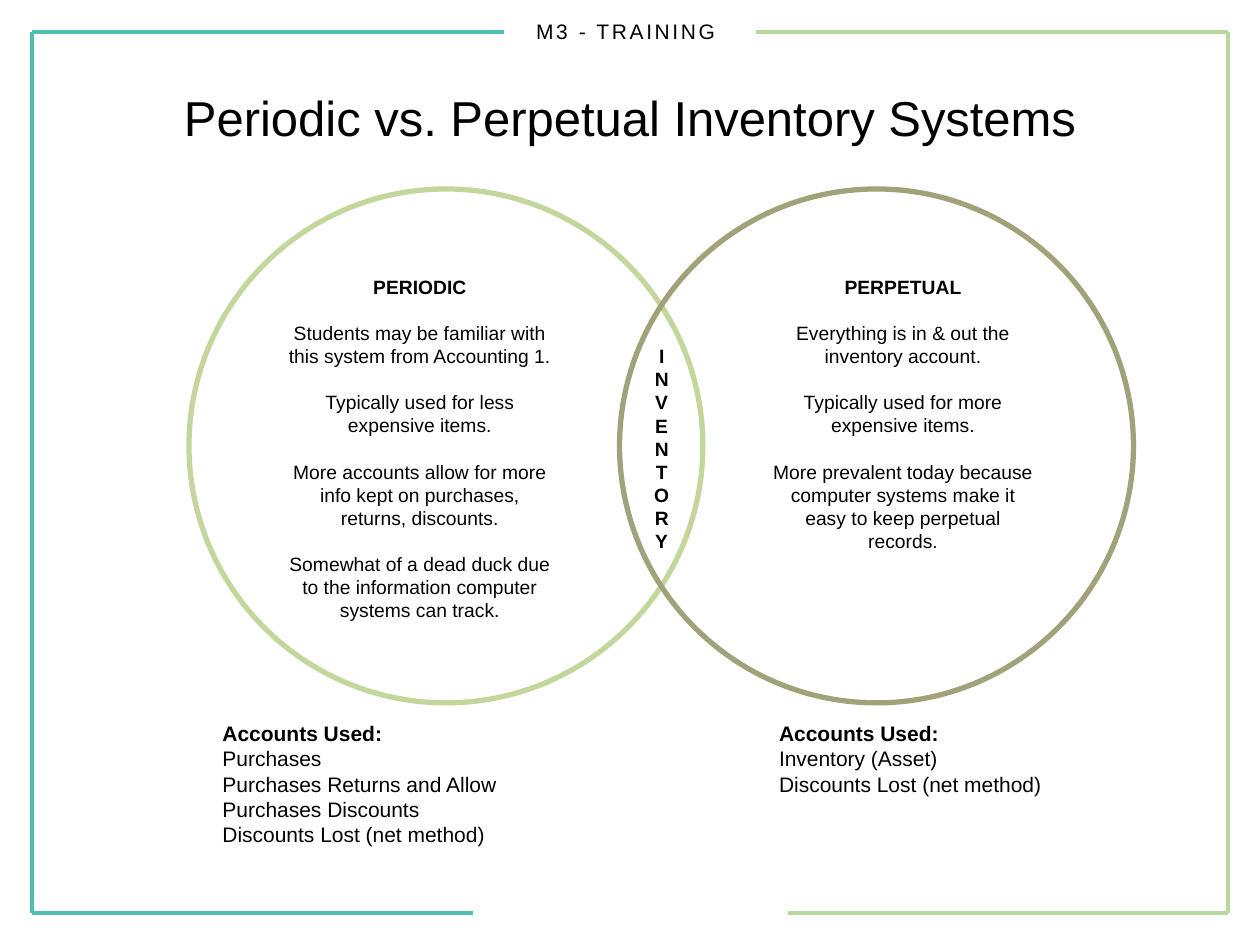
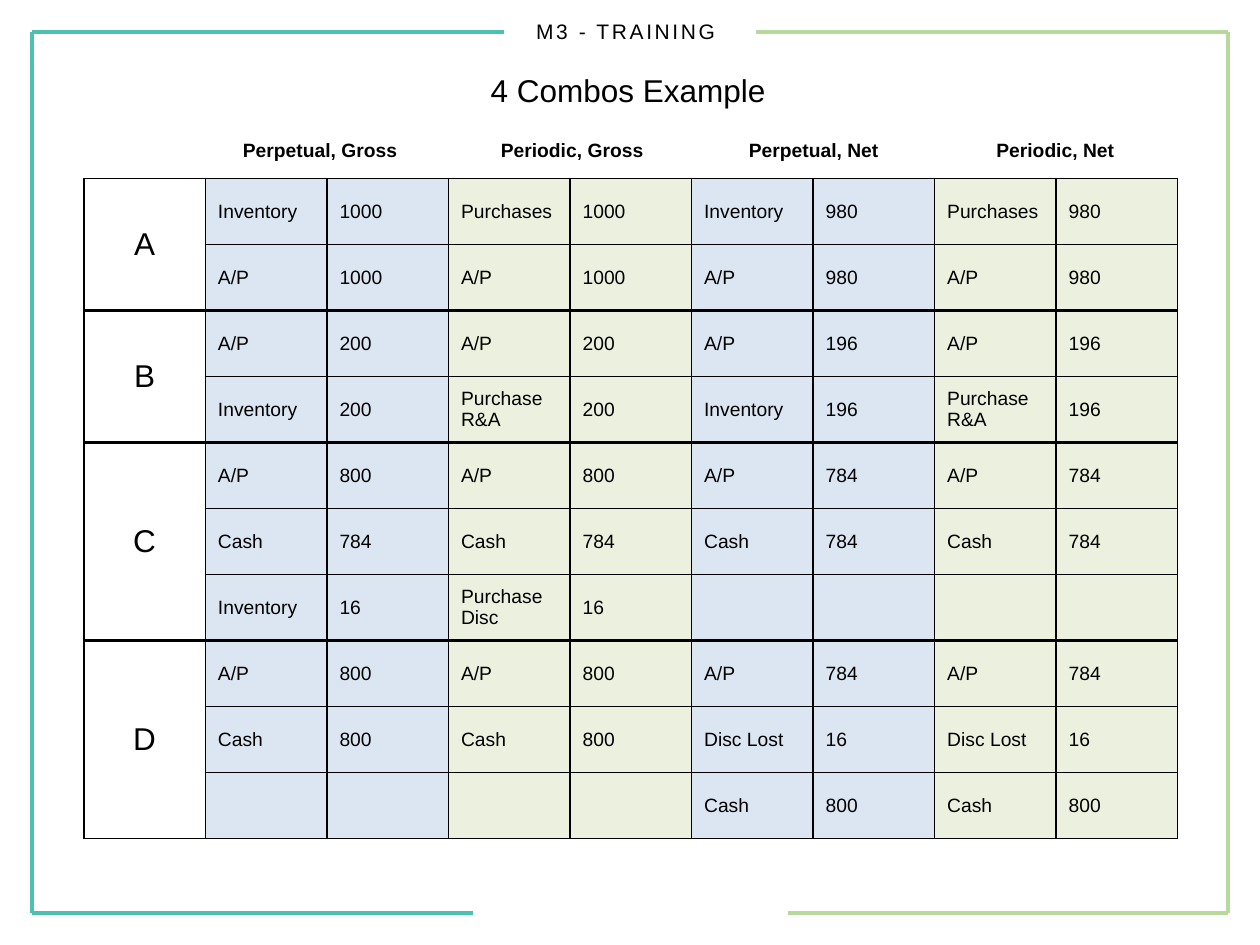
"""Build two training slides that compare periodic and perpetual inventory systems."""
from dataclasses import dataclass
from itertools import accumulate

from lxml.etree import SubElement
from pptx import Presentation
from pptx.dml.color import RGBColor
from pptx.enum.shapes import MSO_CONNECTOR, MSO_SHAPE
from pptx.enum.text import MSO_ANCHOR, MSO_AUTO_SIZE, PP_ALIGN
from pptx.oxml.ns import qn
from pptx.shapes.autoshape import Shape
from pptx.slide import Slide
from pptx.table import _Cell
from pptx.util import Cm, Pt

FONT = "Arial"
BLACK, WHITE = "000000", "FFFFFF"
TEAL, GREEN = "4CC1B0", "B7DA9C"
PERIODIC_RING, PERPETUAL_RING = "C3D69B", "A1A17A"
PERPETUAL_FILL, PERIODIC_FILL = "DCE6F2", "EBF1DE"

TITLE_ONLY, TWO_CONTENT = 5, 3
FRAME_LEFT, FRAME_TOP, FRAME_RIGHT, FRAME_BOTTOM = 0.64, 0.64, 24.76, 18.41
RING_TOP, RING_SIZE = 3.81, 10.36
COLUMN_WIDTH, ROW_HEIGHT = 2.45, 1.33
THIN, THICK = 1, 1.5


@dataclass(frozen=True)
class Box:
    left: float
    top: float
    width: float
    height: float


@dataclass(frozen=True)
class Style:
    size: float
    alignment: PP_ALIGN = PP_ALIGN.CENTER
    anchor: MSO_ANCHOR = MSO_ANCHOR.TOP
    bold_lines: int = 0
    gap: float = 0


@dataclass(frozen=True)
class FrameLine:
    start: tuple[float, float]
    end: tuple[float, float]
    color: str


@dataclass(frozen=True)
class System:
    ring_left: float
    ring_color: str
    features_box: Box
    features: list[str]
    accounts_box: Box
    accounts: list[str]


@dataclass(frozen=True)
class Group:
    letter: str
    rows: list[list[str]]


HEADER = Style(12, anchor=MSO_ANCHOR.MIDDLE)
MAIN_TITLE = Style(28, anchor=MSO_ANCHOR.MIDDLE)
SMALL_TITLE = Style(18, anchor=MSO_ANCHOR.MIDDLE)
FEATURES = Style(11, bold_lines=1, gap=13.2)
ACCOUNTS = Style(12, PP_ALIGN.LEFT, bold_lines=1)
OVERLAP = Style(11, bold_lines=9)
COLUMN_HEADING = Style(11, bold_lines=1)
LETTER_CELL = Style(18, anchor=MSO_ANCHOR.MIDDLE)
ENTRY_CELL = Style(11, PP_ALIGN.LEFT, MSO_ANCHOR.MIDDLE)

FRAME = [
    FrameLine((FRAME_LEFT, FRAME_TOP), (FRAME_LEFT, FRAME_BOTTOM), TEAL),
    FrameLine((FRAME_RIGHT, FRAME_TOP), (FRAME_RIGHT, FRAME_BOTTOM), GREEN),
    FrameLine((FRAME_LEFT, FRAME_BOTTOM), (9.53, FRAME_BOTTOM), TEAL),
    FrameLine((15.88, FRAME_BOTTOM), (FRAME_RIGHT, FRAME_BOTTOM), GREEN),
    FrameLine((FRAME_LEFT, FRAME_TOP), (10.16, FRAME_TOP), TEAL),
    FrameLine((15.24, FRAME_TOP), (FRAME_RIGHT, FRAME_TOP), GREEN),
]

SYSTEMS = [
    System(
        3.81, PERIODIC_RING, Box(5.5, 5.42, 5.93, 7.32),
        [
            "PERIODIC",
            "Students may be familiar with this system from Accounting 1.",
            "Typically used for less expensive items.",
            "More accounts allow for more info kept on purchases, returns, discounts.",
            "Somewhat of a dead duck due to the information computer systems can track.",
        ],
        Box(4.23, 14.4, 7.62, 2.82),
        [
            "Accounts Used:",
            "Purchases",
            "Purchases Returns and Allow",
            "Purchases Discounts",
            "Discounts Lost (net method)",
        ],
    ),
    System(
        12.49, PERPETUAL_RING, Box(15.24, 5.42, 5.93, 5.9),
        [
            "PERPETUAL",
            "Everything is in & out the inventory account.",
            "Typically used for more expensive items.",
            "More prevalent today because computer systems make it easy to keep perpetual records.",
        ],
        Box(15.45, 14.4, 7.62, 1.8),
        ["Accounts Used:", "Inventory (Asset)", "Discounts Lost (net method)"],
    ),
]

COLUMN_HEADINGS = {
    "Perpetual, Gross": 4.02,
    "Periodic, Gross": 9.1,
    "Perpetual, Net": 13.97,
    "Periodic, Net": 18.84,
}

GROUPS = [
    Group("A", [
        ["Inventory", "1000", "Purchases", "1000", "Inventory", "980", "Purchases", "980"],
        ["A/P", "1000", "A/P", "1000", "A/P", "980", "A/P", "980"],
    ]),
    Group("B", [
        ["A/P", "200", "A/P", "200", "A/P", "196", "A/P", "196"],
        ["Inventory", "200", "Purchase\vR&A", "200", "Inventory", "196", "Purchase\vR&A", "196"],
    ]),
    Group("C", [
        ["A/P", "800", "A/P", "800", "A/P", "784", "A/P", "784"],
        ["Cash", "784", "Cash", "784", "Cash", "784", "Cash", "784"],
        ["Inventory", "16", "Purchase\vDisc", "16", "", "", "", ""],
    ]),
    Group("D", [
        ["A/P", "800", "A/P", "800", "A/P", "784", "A/P", "784"],
        ["Cash", "800", "Cash", "800", "Disc Lost", "16", "Disc Lost", "16"],
        ["", "", "", "", "Cash", "800", "Cash", "800"],
    ]),
]


def color(value: str) -> RGBColor:
    """Turn a hex string into a colour."""
    return RGBColor.from_string(value)


def place(shape: Shape, box: Box) -> None:
    """Move and size a shape."""
    shape.left, shape.top = Cm(box.left), Cm(box.top)
    shape.width, shape.height = Cm(box.width), Cm(box.height)


def write(holder: Shape | _Cell, lines: list[str], style: Style) -> None:
    """Write unbulleted paragraphs in one style."""
    text_frame = holder.text_frame
    text_frame.text = "\n".join(lines)
    for index, paragraph in enumerate(text_frame.paragraphs):
        properties = paragraph._p.get_or_add_pPr()
        properties.set("marL", "0")
        properties.set("indent", "0")
        SubElement(properties, qn("a:buNone"))
        paragraph.alignment = style.alignment
        paragraph.space_before = Pt(style.gap if index else 0)
        for run in paragraph.runs:
            run.font.name = FONT
            run.font.size = Pt(style.size)
            run.font.bold = index < style.bold_lines
            run.font.color.rgb = color(BLACK)


def fill_box(shape: Shape, box: Box, lines: list[str], style: Style) -> None:
    """Place a text shape and write its lines."""
    place(shape, box)
    write(shape, lines, style)
    shape.text_frame.word_wrap = True
    shape.text_frame.auto_size = MSO_AUTO_SIZE.NONE
    shape.text_frame.vertical_anchor = style.anchor


def add_text(slide: Slide, box: Box, lines: list[str], style: Style) -> Shape:
    """Add a text box."""
    shape = slide.shapes.add_textbox(0, 0, 0, 0)
    fill_box(shape, box, lines, style)
    return shape


def add_frame(slide: Slide) -> None:
    """Draw the two-colour frame and the running header."""
    for line in FRAME:
        connector = slide.shapes.add_connector(
            MSO_CONNECTOR.STRAIGHT, *map(Cm, line.start + line.end))
        connector.line.color.rgb = color(line.color)
        connector.line.width = Pt(2.25)
        SubElement(connector._element.spPr, qn("a:effectLst"))
    header = add_text(slide, Box(0, 0, 25.4, 1.27), ["M3 - TRAINING "], HEADER)
    run = header.text_frame.paragraphs[0].runs[0]
    run._r.get_or_add_rPr().set("spc", "150")


def add_ring(slide: Slide, left: float, ring_color: str) -> None:
    """Draw one unfilled circle of the Venn diagram."""
    ring = slide.shapes.add_shape(
        MSO_SHAPE.OVAL, Cm(left), Cm(RING_TOP), Cm(RING_SIZE), Cm(RING_SIZE))
    ring.shadow.inherit = False
    ring.fill.background()
    ring.line.color.rgb = color(ring_color)
    ring.line.width = Pt(3)


def format_cell(cell: _Cell, fill: str, top: float, bottom: float) -> None:
    """Set the borders and the fill of a cell."""
    properties = cell._tc.get_or_add_tcPr()
    for side, width in {"L": THIN, "R": THIN, "T": top, "B": bottom}.items():
        border = SubElement(properties, qn(f"a:ln{side}"), w=str(Pt(width)))
        solid = SubElement(border, qn("a:solidFill"))
        SubElement(solid, qn("a:srgbClr"), val=BLACK)
    cell.fill.solid()
    cell.fill.fore_color.rgb = color(fill)
    cell.vertical_anchor = MSO_ANCHOR.MIDDLE


def add_entries_table(slide: Slide) -> None:
    """Add the journal entries, with one merged letter cell per group."""
    rows = [row for group in GROUPS for row in group.rows]
    columns = len(rows[0]) + 1
    table = slide.shapes.add_table(
        len(rows), columns, Cm(1.69), Cm(3.6),
        Cm(COLUMN_WIDTH * columns), Cm(ROW_HEIGHT * len(rows))).table
    table.first_row = table.horz_banding = False
    ends = list(accumulate(len(group.rows) for group in GROUPS))
    inner_ends = ends[:-1]
    for row_index, row in enumerate(rows):
        top = THICK if row_index in inner_ends else THIN
        bottom = THICK if row_index + 1 in inner_ends else THIN
        format_cell(table.cell(row_index, 0), WHITE, top, bottom)
        for column, entry in enumerate(row):
            cell = table.cell(row_index, column + 1)
            write(cell, [entry], ENTRY_CELL)
            fill = PERIODIC_FILL if column // 2 % 2 else PERPETUAL_FILL
            format_cell(cell, fill, top, bottom)
    for group, end in zip(GROUPS, ends):
        letter_cell = table.cell(end - len(group.rows), 0)
        letter_cell.merge(table.cell(end - 1, 0))
        write(letter_cell, [group.letter], LETTER_CELL)
        if end in inner_ends:
            letter_cell._tc.tcPr.find(qn("a:lnB")).set("w", str(Pt(THICK)))


def build_comparison(slide: Slide) -> None:
    """Build the Venn diagram slide."""
    add_frame(slide)
    fill_box(slide.shapes.title, Box(1.27, 0.76, 22.86, 3.18),
             ["Periodic vs. Perpetual Inventory Systems"], MAIN_TITLE)
    for index, system in enumerate(SYSTEMS, start=1):
        add_ring(slide, system.ring_left, system.ring_color)
        add_text(slide, system.features_box, system.features, FEATURES)
        fill_box(slide.placeholders[index], system.accounts_box, system.accounts, ACCOUNTS)
    add_text(slide, Box(12.07, 6.82, 2.54, 4.5), list("INVENTORY"), OVERLAP)


def build_combinations(slide: Slide) -> None:
    """Build the slide with the four combinations."""
    add_frame(slide)
    fill_box(slide.shapes.title, Box(9.1, 1.3, 7.12, 1.02), ["4 Combos Example"], SMALL_TITLE)
    for heading, left in COLUMN_HEADINGS.items():
        add_text(slide, Box(left, 2.67, 4.87, 0.74), [heading], COLUMN_HEADING)
    add_entries_table(slide)


def main() -> None:
    """Build and save the presentation."""
    presentation = Presentation()
    presentation.slide_width, presentation.slide_height = Cm(25.4), Cm(19.05)
    for layout, build in ((TWO_CONTENT, build_comparison), (TITLE_ONLY, build_combinations)):
        build(presentation.slides.add_slide(presentation.slide_layouts[layout]))
    presentation.save("out.pptx")


if __name__ == "__main__":
    main()
